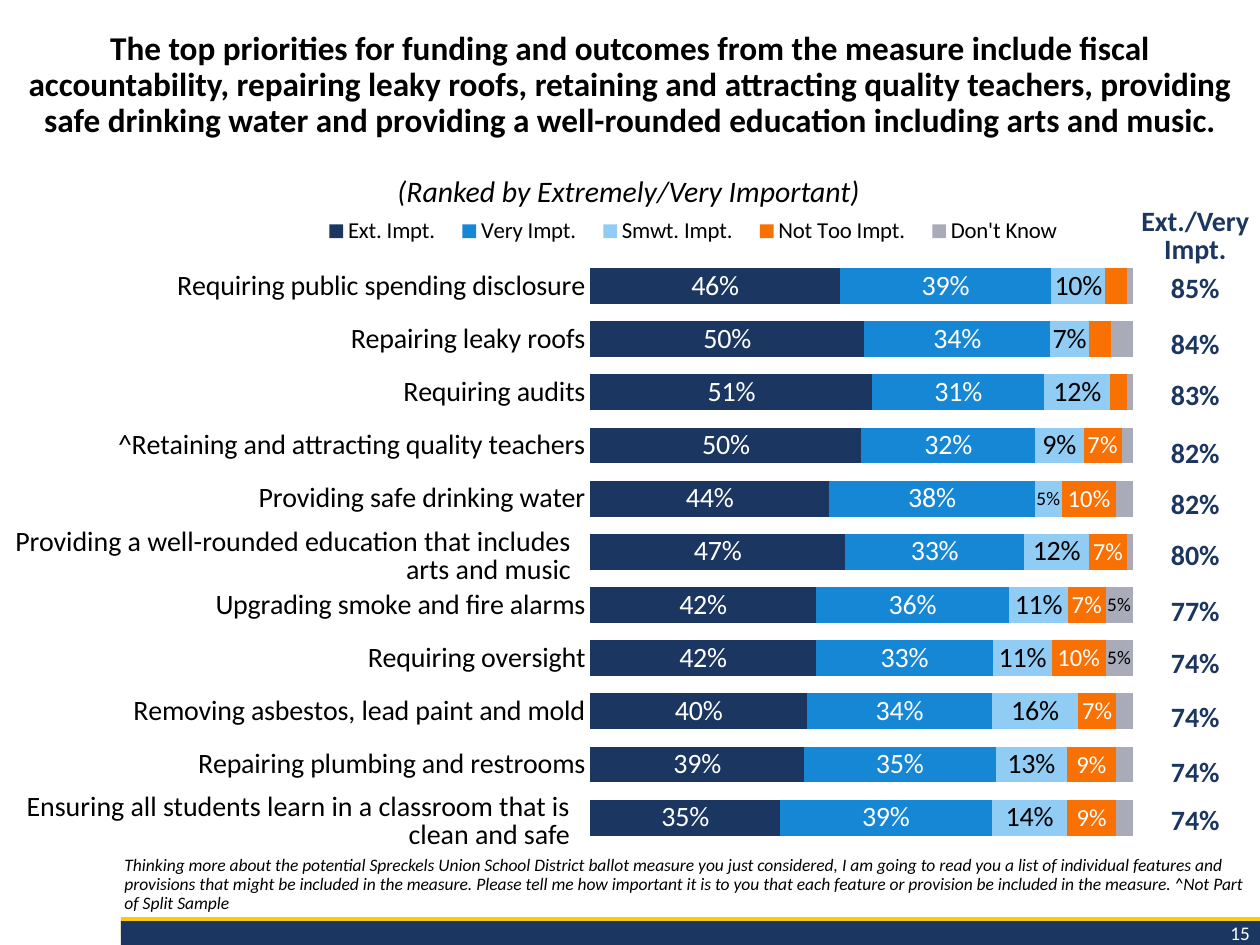
from lxml import etree
from pptx import Presentation
from pptx.chart.data import CategoryChartData
from pptx.dml.color import RGBColor
from pptx.enum.chart import (XL_CHART_TYPE, XL_LABEL_POSITION,
                             XL_LEGEND_POSITION, XL_TICK_MARK)
from pptx.enum.shapes import MSO_SHAPE
from pptx.enum.text import MSO_ANCHOR, PP_ALIGN
from pptx.oxml.ns import qn
from pptx.util import Cm, Pt

LEFT, CENTER, RIGHT = PP_ALIGN.LEFT, PP_ALIGN.CENTER, PP_ALIGN.RIGHT
TOP, MIDDLE, BOTTOM = MSO_ANCHOR.TOP, MSO_ANCHOR.MIDDLE, MSO_ANCHOR.BOTTOM
FONT = "Calibri"
NAVY, BLACK, WHITE = "1B3660", "000000", "FFFFFF"
NO_GRID_STYLE = "{2D5ABB26-0587-4C30-8999-92F81FD0307C}"


def format_font(font, color, **values):
    for name, value in {"name": FONT, **values}.items():
        setattr(font, name, value)
    font.color.rgb = RGBColor.from_string(color)


def place(parent, index, **fractions):
    """Give a plot area or legend a fixed place, in fractions of the chart."""
    for old in parent.findall(qn("c:layout")):
        parent.remove(old)
    layout = etree.Element(qn("c:layout"))
    manual = etree.SubElement(layout, qn("c:manualLayout"))
    if index == 0:
        etree.SubElement(manual, qn("c:layoutTarget")).set("val", "inner")
    for name in ("xMode", "yMode"):
        etree.SubElement(manual, qn("c:" + name)).set("val", "edge")
    for name, value in fractions.items():
        etree.SubElement(manual, qn("c:" + name)).set("val", str(value))
    parent.insert(index, layout)


deck = Presentation()
deck.slide_width, deck.slide_height = Cm(25.4), Cm(19.05)
page = deck.slides.add_slide(deck.slide_layouts[6])

# Footer bands
for top, height, color in [(18.49, 0.41, "FCCA09"), (18.57, 0.48, "1B3661")]:
    band = page.shapes.add_shape(MSO_SHAPE.RECTANGLE, Cm(2.44), Cm(top),
                                 Cm(22.96), Cm(height))
    band.shadow.inherit = False
    band.fill.solid()
    band.fill.fore_color.rgb = RGBColor.from_string(color)
    band.line.fill.background()

# Stacked bars
categories = [
    "Requiring public spending disclosure", "Repairing leaky roofs",
    "Requiring audits", "^Retaining and attracting quality teachers",
    "Providing safe drinking water", "", "Upgrading smoke and fire alarms",
    "Requiring oversight", "Removing asbestos, lead paint and mold",
    "Repairing plumbing and restrooms", ""]
ONLY_LARGE = '[>0.045]0%;""'
# name, percentages, fill, label colour, label size, label format
answers = [
    ("Ext. Impt.", [46, 50, 51, 50, 44, 47, 42, 42, 40, 39, 35],
     NAVY, WHITE, 16, "0%"),
    ("Very Impt.", [39, 34, 31, 32, 38, 33, 36, 33, 34, 35, 39],
     "1587D4", WHITE, 16, "0%"),
    ("Smwt. Impt.", [10, 7, 12, 9, 5, 12, 11, 11, 16, 13, 14],
     "91CCF4", BLACK, 16, "0%"),
    ("Not Too Impt.", [4, 4, 3, 7, 10, 7, 7, 10, 7, 9, 9],
     "F97103", WHITE, 14, ONLY_LARGE),
    ("Don't Know", [1, 4, 1, 2, 3, 1, 5, 5, 3, 3, 3],
     "A9ABB8", BLACK, 11, ONLY_LARGE),
]
data = CategoryChartData(number_format="0%")
data.categories = categories
for name, percentages, *_ in answers:
    data.add_series(name, [value / 100 for value in percentages])
chart = page.shapes.add_chart(
    XL_CHART_TYPE.BAR_STACKED_100, Cm(-2.67), Cm(4.04), Cm(26.21), Cm(13.84),
    data).chart
chart.has_title = False
format_font(chart.font, BLACK, size=Pt(16))
plot = chart.plots[0]
plot.gap_width, plot.overlap, plot.vary_by_categories = 48, 100, False

for series, (_, _, fill, color, size, number_format) in zip(plot.series, answers):
    series.format.fill.solid()
    series.format.fill.fore_color.rgb = RGBColor.from_string(fill)
    labels = series.data_labels
    labels.show_value = True
    labels.position = XL_LABEL_POSITION.CENTER
    labels.number_format, labels.number_format_is_linked = number_format, False
    format_font(labels.font, color, size=Pt(size))
narrow_label = plot.series[2].points[4].data_label
format_font(narrow_label.font, BLACK, size=Pt(11))
narrow_label.position = XL_LABEL_POSITION.CENTER

axis = chart.category_axis
axis.reverse_order = True
axis.major_tick_mark = axis.minor_tick_mark = XL_TICK_MARK.NONE
axis.format.line.fill.background()
format_font(axis.tick_labels.font, BLACK, size=Pt(16))
scale = chart.value_axis
scale.minimum_scale, scale.maximum_scale, scale.major_unit = 0, 1, 0.2
scale.has_major_gridlines = scale.visible = False

chart.has_legend = True
legend = chart.legend
legend.position, legend.include_in_layout = XL_LEGEND_POSITION.TOP, False
format_font(legend.font, BLACK, size=Pt(13))
plot_area = chart.element.find(".//" + qn("c:plotArea"))
place(plot_area, 0, x=0.556, y=0.086, w=0.417, h=0.852)
place(chart.element.find(".//" + qn("c:legend")), 1, x=0.34, y=0.02, w=0.59, h=0.05)

# Totals column: row height in cm, text
totals = [(1.12, "Ext./Very Impt."), (0.79, "85%"), (1.12, "84%"), (1.04, "83%"),
          (1.17, "82%"), (1.02, "82%"), (1.04, "80%"), (1.12, "77%"),
          (1.04, "74%"), (1.09, "74%"), (1.12, "74%"), (0.97, "74%")]
table = page.shapes.add_table(len(totals), 1, Cm(22.61), Cm(4.22), Cm(2.97),
                              Cm(sum(height for height, _ in totals))).table
table.first_row = table.horz_banding = False
table._tbl.tblPr.find(qn("a:tableStyleId")).text = NO_GRID_STYLE
for row, (height, text) in zip(table.rows, totals):
    row.height = Cm(height)
    cell = row.cells[0]
    cell.fill.background()
    cell.vertical_anchor = BOTTOM
    cell.margin_left = cell.margin_right = cell.margin_top = Cm(0.03)
    cell.margin_bottom = 0
    cell.text = text
    para = cell.text_frame.paragraphs[0]
    para.alignment = CENTER
    format_font(para.font, NAVY, size=Pt(16), bold=True)
table.cell(0, 0).text_frame.paragraphs[0].line_spacing = Pt(16)

# Text boxes: place, text, alignment, anchor, line spacing, colour, font
texts = [
    ((0, 0.51, 25.4, 3.1),
     "The top priorities for funding and outcomes from the measure include fiscal "
     "accountability, repairing leaky roofs, retaining and attracting quality "
     "teachers, providing safe drinking water and providing a well-rounded "
     "education including arts and music.",
     CENTER, TOP, 0.9, BLACK, {"size": Pt(19), "bold": True}),
    ((0, 3.35, 25.35, 0.99), "(Ranked by Extremely/Very Important)",
     CENTER, TOP, 1.0, BLACK, {"size": Pt(17), "italic": True}),
    ((2.26, 17.17, 23.09, 1.37),
     "Thinking more about the potential Spreckels Union School District ballot "
     "measure you just considered, I am going to read you a list of individual "
     "features and provisions that might be included in the measure. Please tell "
     "me how important it is to you that each feature or provision be included in "
     "the measure. ^Not Part of Split Sample",
     LEFT, BOTTOM, 0.9, BLACK, {"size": Pt(10), "italic": True}),
    ((-0.48, 10.54, 12.24, 1.42),
     "Providing a well-rounded education that includes arts and music",
     RIGHT, TOP, Pt(16), BLACK, {"size": Pt(16)}),
    ((-0.76, 15.88, 12.5, 1.4),
     "Ensuring all students learn in a classroom that is clean and safe",
     RIGHT, TOP, Pt(16), BLACK, {"size": Pt(16)}),
    ((21.69, 18.44, 3.76, 0.74), "15",
     RIGHT, MIDDLE, 1.0, WHITE, {"size": Pt(11)}),
]
for bounds, text, alignment, anchor, spacing, color, values in texts:
    box = page.shapes.add_textbox(*[Cm(length) for length in bounds])
    frame = box.text_frame
    frame.word_wrap = True
    frame.vertical_anchor = anchor
    para = frame.paragraphs[0]
    para.alignment, para.line_spacing = alignment, spacing
    span = para.add_run()
    span.text = text
    format_font(span.font, color, **values)

deck.save("out.pptx")
